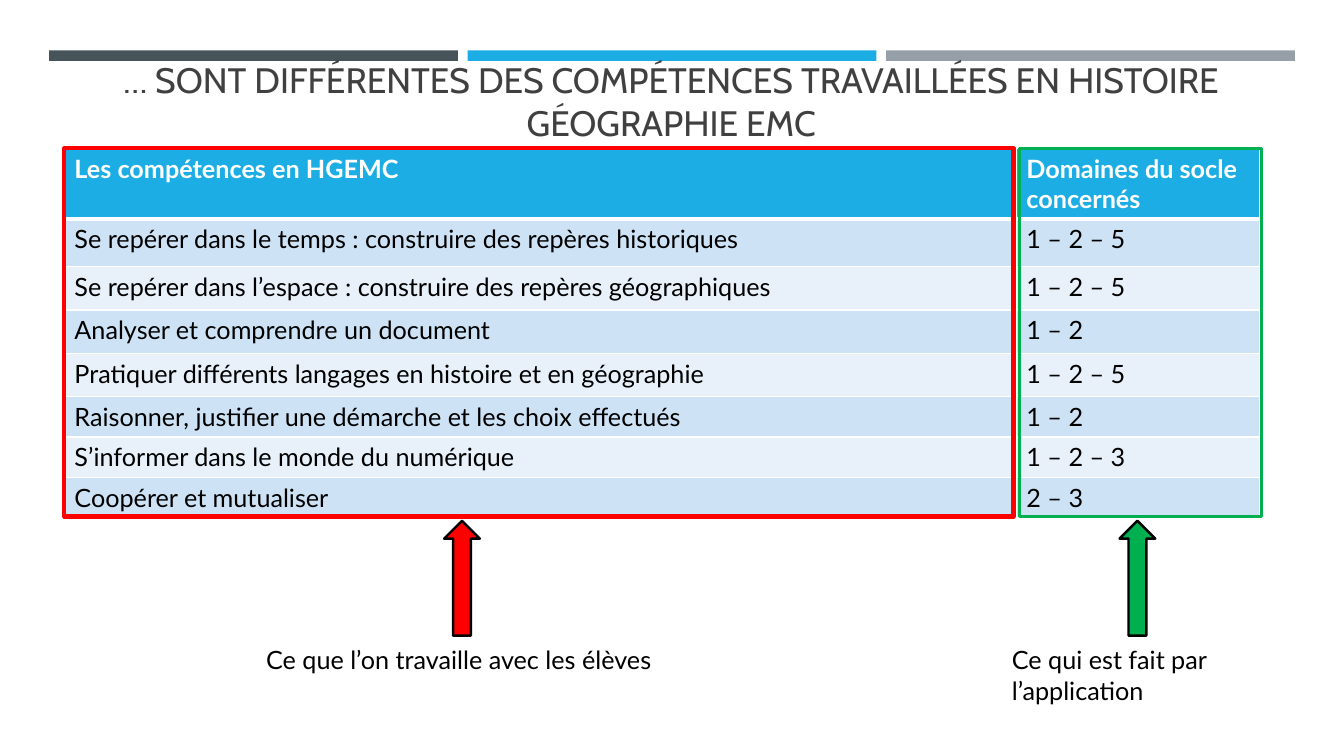
from lxml import etree
from pptx import Presentation
from pptx.dml.color import RGBColor
from pptx.enum.shapes import MSO_SHAPE
from pptx.enum.text import MSO_ANCHOR, MSO_AUTO_SIZE, PP_ALIGN
from pptx.oxml.ns import qn
from pptx.util import Pt

RECTANGLE, ARROW = MSO_SHAPE.RECTANGLE, MSO_SHAPE.RIGHT_ARROW
BOTTOM, CENTER = MSO_ANCHOR.BOTTOM, PP_ALIGN.CENTER
GROW, FIXED = MSO_AUTO_SIZE.SHAPE_TO_FIT_TEXT, MSO_AUTO_SIZE.NONE

TITLE = "… SONT DIFFÉRENTES DES COMPÉTENCES TRAVAILLÉES EN HISTOIRE GÉOGRAPHIE EMC"
SKILLS = [
    ("Les compétences en HGEMC", "Domaines du socle concernés"),
    ("Se repérer dans le temps : construire des repères historiques", "1 – 2 – 5"),
    ("Se repérer dans l’espace : construire des repères géographiques", "1 – 2 – 5"),
    ("Analyser et comprendre un document", "1 – 2"),
    ("Pratiquer différents langages en histoire et en géographie", "1 – 2 – 5"),
    ("Raisonner, justifier une démarche et les choix effectués", "1 – 2"),
    ("S’informer dans le monde du numérique", "1 – 2 – 3"),
    ("Coopérer et mutualiser", "2 – 3"),
]
COLORS = {
    "slate": "465359", "blue": "1CADE4", "grey": "969FA7", "title": "404040",
    "odd": "CDE3F5", "even": "E8F1FA", "white": "FFFFFF", "black": "000000",
    "red": "FF0000", "green": "00B050",
}
BARS = ["slate", "blue", "grey"]
GROUPS = [
    {"color": "red", "left": 46, "width": 678, "line": 3, "arrow": 330,
     "caption": "Ce que l’on travaille avec les élèves", "text_left": 183, "text_width": 320},
    {"color": "green", "left": 728, "width": 173, "line": 2.25, "arrow": 812.5,
     "caption": "Ce qui est fait par l’application", "text_left": 715.7, "text_width": 218},
]
COLUMN_WIDTHS = [680, 174]
ROW_HEIGHTS = [50.4, 34, 31, 31, 31, 28.8, 28.8, 28.8]
TABLE_LEFT, TABLE_TOP, TABLE_HEIGHT = 46, 106, 263
BAR_LEFT, BAR_TOP, BAR_WIDTH, BAR_HEIGHT, BAR_STEP = 35, 36, 292, 7.5, 299
ARROW_LENGTH, ARROW_THICKNESS, ARROW_MIDDLE = 82, 25.5, 413
CAPTION_TOP, CAPTION_HEIGHT = 457, 29


def rgb(color):
    return RGBColor.from_string(COLORS[color])


def box(left, top, width, height):
    return [Pt(length) for length in (left, top, width, height)]


def assign(target, values):
    for key, value in values.items():
        setattr(target, key, value)


def write(frame, text, color, size=18, font="Lato", bold=False):
    frame.text = text
    run = frame.paragraphs[0].runs[0]
    assign(run.font, {"name": font, "size": Pt(size), "bold": bold})
    run.font.color.rgb = rgb(color)


def draw(kind, place, fill=None, line=None, weight=1):
    shape = slide.shapes.add_shape(kind, *box(*place))
    shape.shadow.inherit = False
    if fill:
        shape.fill.solid()
        shape.fill.fore_color.rgb = rgb(fill)
    else:
        shape.fill.background()
    if line:
        shape.line.color.rgb = rgb(line)
        shape.line.width = Pt(weight)
    else:
        shape.line.fill.background()
    return shape


def border(cell, side, weight):
    edge = etree.SubElement(cell._tc.get_or_add_tcPr(), qn(f"a:ln{side}"), w=str(Pt(weight)))
    paint = etree.SubElement(edge, qn("a:solidFill"))
    etree.SubElement(paint, qn("a:srgbClr"), val=COLORS["white"])


deck = Presentation()
assign(deck, {"slide_width": Pt(960), "slide_height": Pt(540)})
slide = deck.slides.add_slide(deck.slide_layouts[5])

for index, color in enumerate(BARS):
    draw(RECTANGLE, (BAR_LEFT + index * BAR_STEP, BAR_TOP, BAR_WIDTH, BAR_HEIGHT), color)

title = slide.shapes.title
slide.shapes._spTree.append(title._element)
assign(title, dict(zip(("left", "top", "width", "height"), box(45.5, 57.5, 868, 48.5))))
write(title.text_frame, TITLE, "title", 25.2, "Cabin")
assign(title.text_frame, {"vertical_anchor": BOTTOM, "word_wrap": True, "auto_size": FIXED})
title.text_frame.paragraphs[0].alignment = CENTER

table = slide.shapes.add_table(
    len(SKILLS), len(COLUMN_WIDTHS),
    *box(TABLE_LEFT, TABLE_TOP, sum(COLUMN_WIDTHS), sum(ROW_HEIGHTS))).table
for column, width in zip(table.columns, COLUMN_WIDTHS):
    column.width = Pt(width)
for index, (row, height, texts) in enumerate(zip(table.rows, ROW_HEIGHTS, SKILLS)):
    row.height = Pt(height)
    header = index == 0
    fill = "blue" if header else "odd" if index % 2 else "even"
    for cell, text in zip(row.cells, texts):
        write(cell.text_frame, text, "white" if header else "black", bold=header)
        for side in "LRTB":
            thick = (header and side == "B") or (index == 1 and side == "T")
            border(cell, side, 3 if thick else 1)
        cell.fill.solid()
        cell.fill.fore_color.rgb = rgb(fill)

for group in GROUPS:
    color = group["color"]
    draw(RECTANGLE, (group["left"], TABLE_TOP, group["width"], TABLE_HEIGHT),
         line=color, weight=group["line"])
    arrow = draw(ARROW, (group["arrow"] - ARROW_LENGTH / 2, ARROW_MIDDLE - ARROW_THICKNESS / 2,
                         ARROW_LENGTH, ARROW_THICKNESS), color, "black", 1.75)
    arrow.rotation = 270
    caption = slide.shapes.add_textbox(
        *box(group["text_left"], CAPTION_TOP, group["text_width"], CAPTION_HEIGHT)).text_frame
    assign(caption, {"word_wrap": True, "auto_size": GROW})
    write(caption, group["caption"], "black")

deck.save("out.pptx")
